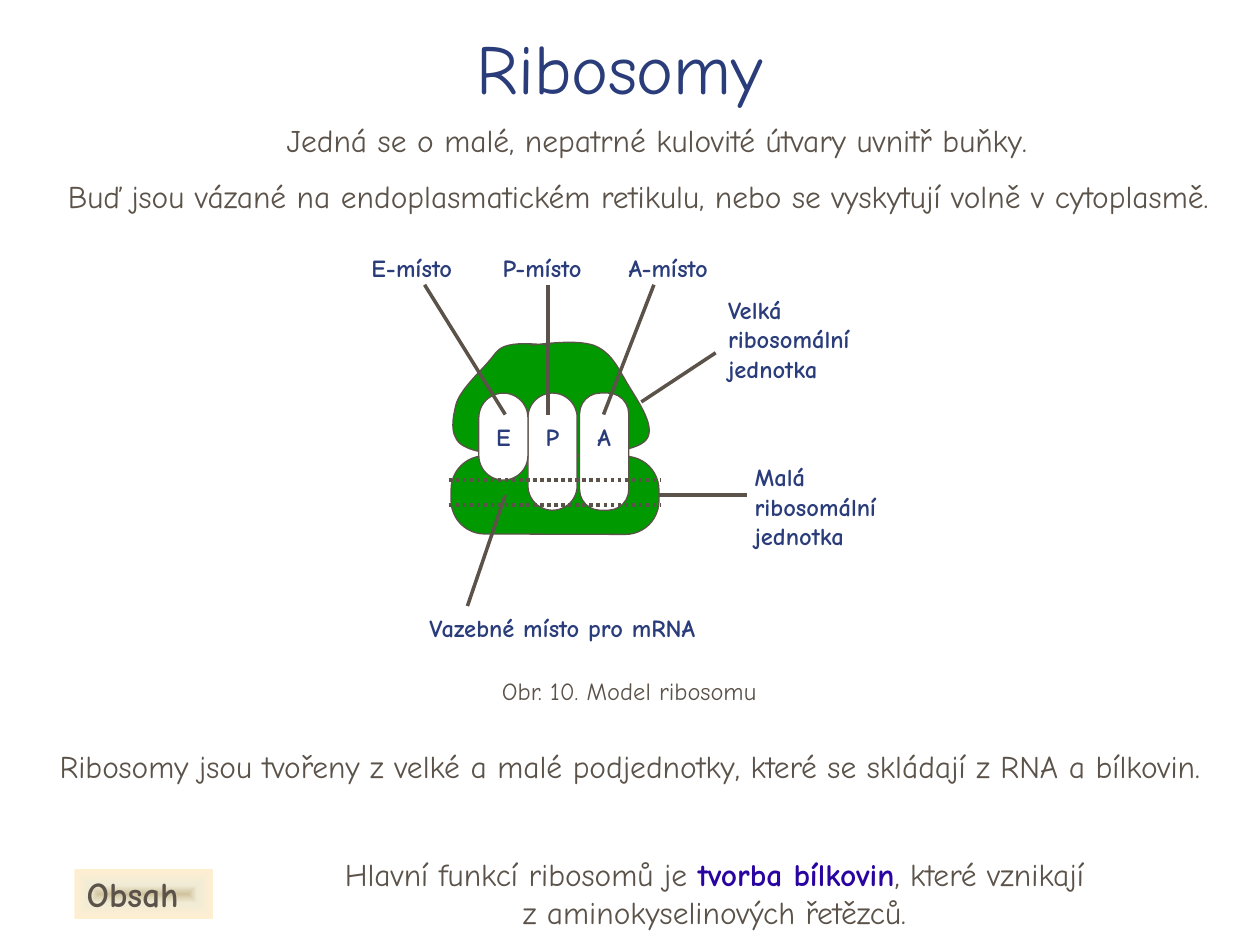
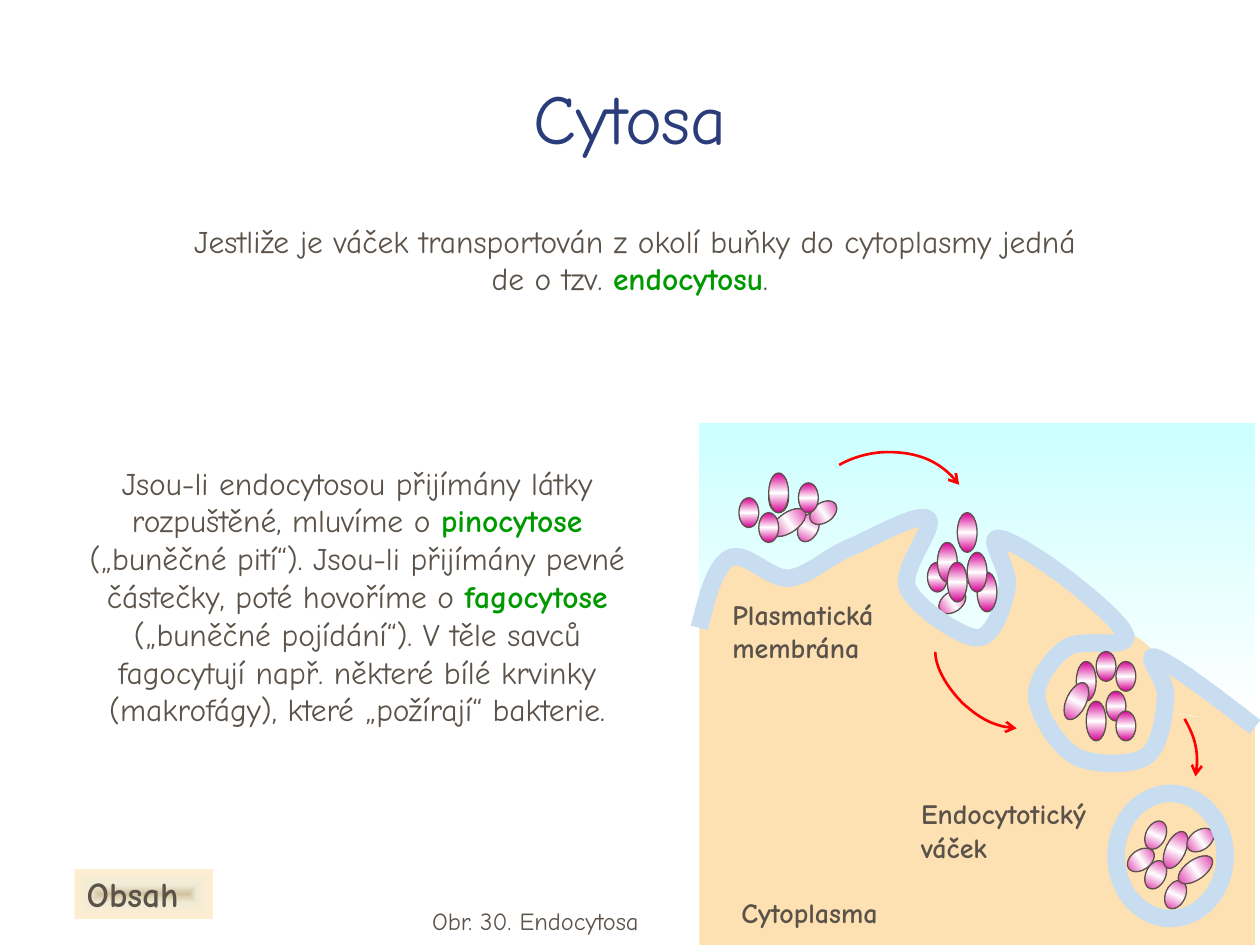
from copy import deepcopy
from dataclasses import dataclass
from math import cos, radians, sin

from lxml import etree
from pptx import Presentation
from pptx.dml.color import RGBColor
from pptx.enum.dml import MSO_LINE
from pptx.enum.shapes import MSO_CONNECTOR, MSO_SHAPE
from pptx.enum.text import MSO_ANCHOR, MSO_AUTO_SIZE, PP_ALIGN
from pptx.oxml.ns import qn
from pptx.slide import Slide
from pptx.util import Emu, Inches, Pt

FONT = "Comic Neue"
NBSP = chr(160)
NAVY = RGBColor(0x2A, 0x3D, 0x7A)
BROWN = RGBColor(0x5B, 0x52, 0x49)
VIOLET = RGBColor(0x29, 0x04, 0xA0)
GREEN = RGBColor(0x00, 0x99, 0x00)
WHITE = RGBColor(0xFF, 0xFF, 0xFF)
RED = RGBColor(0xFF, 0x00, 0x00)
SAND = RGBColor(0xFD, 0xE1, 0xB3)
MEMBRANE_BLUE = RGBColor(0xC9, 0xDD, 0xF1)
MAGENTA = RGBColor(0xD6, 0x00, 0x93)
SKY = RGBColor(0xCC, 0xFF, 0xFF)
BUTTON_STOPS = [(0, RGBColor(0xD1, 0xC3, 0x9F)), (35, RGBColor(0xF0, 0xEB, 0xD5)),
                (100, RGBColor(0xFF, 0xEF, 0xD1))]
PARTICLE_STOPS = [(0, MAGENTA), (50, WHITE), (100, MAGENTA)]

SLIDE_WIDTH, SLIDE_HEIGHT = Inches(10), Inches(7.5)
PAGE_COLUMNS = 100


@dataclass
class Grid:
    """Square cells on a page, counted from the left top corner of a box."""
    page: Slide
    left: int
    top: int
    cell: float

    def point(self, column, row):
        return Emu(round(self.left + column * self.cell)), Emu(round(self.top + row * self.cell))

    def box(self, column, row, width, height):
        return (*self.point(column, row), Emu(round(width * self.cell)), Emu(round(height * self.cell)))

    def inner(self, column, row, width, columns):
        """Divide a box that is width cells wide into the given number of columns."""
        return Grid(self.page, *self.point(column, row), width * self.cell / columns)


def write(frame, paragraphs, size, color, bold=False, align=PP_ALIGN.LEFT):
    """Each paragraph is a list of spans; a span (text, color) is emphasised."""
    for index, spans in enumerate(paragraphs):
        para = frame.paragraphs[0] if index == 0 else frame.add_paragraph()
        para.alignment = align
        for item in spans:
            text, emphasis = (item, None) if isinstance(item, str) else item
            span = para.add_run()
            span.text = text
            span.font.name = FONT
            span.font.size = Pt(size)
            span.font.bold = bold or emphasis is not None
            span.font.color.rgb = emphasis or color


def add_text(grid, cells, paragraphs, size=18, color=BROWN, bold=False, align=PP_ALIGN.CENTER,
             anchor=MSO_ANCHOR.TOP, wrap=True, grow=True):
    frame = grid.page.shapes.add_textbox(*grid.box(*cells)).text_frame
    frame.word_wrap = wrap
    frame.vertical_anchor = anchor
    frame.auto_size = MSO_AUTO_SIZE.SHAPE_TO_FIT_TEXT if grow else MSO_AUTO_SIZE.NONE
    write(frame, paragraphs, size, color, bold, align)


def add_label(grid, cells, lines, size, color, anchor=MSO_ANCHOR.TOP, wrap=False):
    add_text(grid, cells, [[line] for line in lines], size, color, True, PP_ALIGN.LEFT, anchor, wrap)


def set_gradient(shape, stops, centred=False):
    """Fill from top to bottom, or from the centre outwards."""
    shape.fill.background()
    gradient = etree.Element(qn("a:gradFill"), rotWithShape="1")
    stop_list = etree.SubElement(gradient, qn("a:gsLst"))
    for share, color in stops:
        stop = etree.SubElement(stop_list, qn("a:gs"), pos=str(share * 1000))
        etree.SubElement(stop, qn("a:srgbClr"), val=str(color))
    if centred:
        route = etree.SubElement(gradient, qn("a:path"))
        route.set("path", "rect")
        etree.SubElement(route, qn("a:fillToRect"), l="50000", t="50000", r="50000", b="50000")
    else:
        etree.SubElement(gradient, qn("a:lin"), ang="5400000", scaled="1")
    properties = shape._element.spPr
    properties.replace(properties.find(qn("a:noFill")), gradient)


def paint(shape, fill=None, line=None, width=0.75):
    shape.shadow.inherit = False
    if isinstance(fill, list):
        set_gradient(shape, fill)
    elif fill is None:
        shape.fill.background()
    else:
        shape.fill.solid()
        shape.fill.fore_color.rgb = fill
    if line is None:
        shape.line.fill.background()
    else:
        shape.line.color.rgb = line
        shape.line.width = Pt(width)
    return shape


def add_preset(grid, kind, cells, fill=None, line=None, width=0.75):
    return paint(grid.page.shapes.add_shape(kind, *grid.box(*cells)), fill, line, width)


def add_curve(grid, knots, corner=None, fill=None, line=None, width=0.75):
    """Outline of a start, then two handles and an end for each bend.

    A corner adds the unstroked sector between the curve and that point.
    """
    vertices = [grid.point(*knot) for knot in knots + ([corner] if corner else [])]
    builder = grid.page.shapes.build_freeform(*vertices[0])
    builder.add_line_segments(vertices[1:], close=False)
    shape = paint(builder.convert_to_shape(), fill, line, width)
    outline = next(shape._element.iter(qn("a:path")))
    segments = outline.findall(qn("a:lnTo"))
    last = segments.pop() if corner else None
    for index in range(0, len(segments), 3):
        bend = etree.Element(qn("a:cubicBezTo"))
        segments[index].addprevious(bend)
        for segment in segments[index:index + 3]:
            bend.append(segment[0])
            outline.remove(segment)
    if corner:
        sector = deepcopy(outline)
        sector.set("stroke", "0")
        etree.SubElement(sector, qn("a:close"))
        outline.addnext(sector)
        outline.set("fill", "none")
        outline.remove(last)
    return shape


def add_line(grid, start, end, dotted=False):
    line = grid.page.shapes.add_connector(MSO_CONNECTOR.STRAIGHT, *grid.point(*start), *grid.point(*end))
    line.line.color.rgb = BROWN
    line.line.width = Pt(2)
    if dotted:
        line.line.dash_style = MSO_LINE.ROUND_DOT
    etree.SubElement(line._element.spPr, qn("a:effectLst"))
    return line


def add_caption(grid, cells, text):
    add_text(grid, cells, [[text]], 14)


def add_contents_button(grid):
    button = add_preset(grid, MSO_SHAPE.ACTION_BUTTON_CUSTOM, (5.9, 69, 11, 3.9))
    set_gradient(button, BUTTON_STOPS, centred=True)
    frame = button.text_frame
    frame.word_wrap = False
    frame.vertical_anchor = MSO_ANCHOR.MIDDLE
    write(frame, [["Obsah"]], 20, BROWN, True)


def add_title_panel(grid, cells, text):
    """Title on a half transparent white panel."""
    panel = add_preset(grid, MSO_SHAPE.RECTANGLE, cells, WHITE)
    etree.SubElement(next(panel._element.spPr.iter(qn("a:srgbClr"))), qn("a:alpha"), val="49000")
    frame = panel.text_frame
    frame.word_wrap = True
    frame.vertical_anchor = MSO_ANCHOR.BOTTOM
    write(frame, [[text]], 40, NAVY, align=PP_ALIGN.CENTER)


def add_site(grid, letter, column, height, rounding):
    site = add_preset(grid, MSO_SHAPE.ROUNDED_RECTANGLE, (column, 11.6, 3.9, height), WHITE, BROWN)
    site.adjustments[0] = rounding
    frame = site.text_frame
    frame.word_wrap = False
    frame.vertical_anchor = MSO_ANCHOR.MIDDLE
    # Letters of the long sites stand level with the letter of the short one.
    frame.margin_bottom = Inches(0.05) + round((height - 6.9) * grid.cell)
    write(frame, [[letter]], 14, NAVY, True, PP_ALIGN.CENTER)


def draw_ribosome(grid):
    small = add_preset(grid, MSO_SHAPE.ROUNDED_RECTANGLE, (7.3, 16.6, 16.5, 6.2), GREEN, BROWN)
    small.adjustments[0] = 0.43
    small.rotation = 0.2
    add_curve(grid, [
        (15.2, 7.8), (14, 7.7), (12.7, 7.6), (11.9, 7.8), (11, 8), (10.9, 8.4), (10.2, 9.2),
        (9.5, 10), (8, 11.4), (7.7, 12.5), (7.4, 13.7), (7.1, 15.3), (8.5, 15.9),
        (9.9, 16.6), (13.7, 16.7), (16.1, 16.6), (18.5, 16.5), (22, 16.3), (22.8, 15.3),
        (23.7, 14.2), (21.8, 11.8), (21.1, 10.5), (20.4, 9.3), (19.9, 8.3), (18.6, 7.8),
        (17.3, 7.4), (15.5, 7.6), (13.6, 7.8),
    ], fill=GREEN, line=BROWN)
    for letter, column, height, rounding in (("P", 13.4, 9.3, 0.5), ("A", 17.5, 9.3, 0.42),
                                             ("E", 9.5, 6.9, 0.5)):
        add_site(grid, letter, column, height, rounding)
    for row in (18.5, 20.5):
        add_line(grid, (7.1, row), (23.9, row), dotted=True)
    for start, end in (((5.2, 3), (11.6, 13.3)), ((15, 3), (15, 13.3)), ((23.4, 3), (19.4, 13.3)),
                       ((22.4, 12.3), (28.3, 8.4)), ((11.6, 19.7), (8.6, 28.5))):
        add_line(grid, start, end)
    add_line(grid, (23.8, 19.7), (30.8, 19.7)).begin_connect(small, 3)
    for cells, lines in (((0, 0, 9.4, 3.3), ["E-místo"]),
                         ((10.4, 0, 9.2, 3.3), ["P-místo"]),
                         ((20.4, 0, 9.6, 3.3), ["A-místo"]),
                         ((28.3, 3.3, 14.3, 8), ["Velká", "ribosomální", "jednotka"]),
                         ((30.4, 16.6, 13.2, 8), ["Malá", "ribosomální", "jednotka"]),
                         ((4.6, 28.6, 26.1, 3.3), ["Vazebné místo pro mRNA"])):
        add_label(grid, cells, lines, 14, NAVY, MSO_ANCHOR.BOTTOM)
    add_caption(grid, (0.8, 33.6, 41.3, 3.3), "Obr. 10. Model ribosomu")


def add_particles(grid, height, turn, places):
    for column, row in places:
        particle = add_preset(grid, MSO_SHAPE.OVAL, (column, row, 2, height), PARTICLE_STOPS, BROWN)
        particle.rotation = turn


def add_arrow(grid, knots, corner, pivot=(0, 0), turn=0):
    """Curved arrow whose frame is turned about its middle, the pivot."""
    across, down = cos(radians(turn)), sin(radians(turn))

    def turn_back(knot):
        x, y = knot[0] - pivot[0], knot[1] - pivot[1]
        return pivot[0] + x * across + y * down, pivot[1] - x * down + y * across

    arrow = add_curve(grid, [turn_back(knot) for knot in knots], turn_back(corner), line=RED, width=1.5)
    arrow.rotation = turn
    etree.SubElement(arrow._element.spPr.find(qn("a:ln")), qn("a:tailEnd"), type="arrow")


def draw_endocytosis(grid):
    add_preset(grid, MSO_SHAPE.RECTANGLE, (0, 0, 56, 30), [(0, SKY), (100, WHITE)])
    add_preset(grid, MSO_SHAPE.RECTANGLE, (0, 29.6, 56, 23), SAND)
    add_particles(grid, 3, 25, [(45, 40), (10, 9), (45, 44), (47, 46)])
    add_particles(grid, 4, 25, [(47, 41)])
    add_particles(grid, 3, 55, [(49.5, 40.5), (43.5, 42.5), (11.5, 7.5), (24.5, 16.5)])
    add_particles(grid, 4, 55, [(49, 43), (8, 8)])
    add_particles(grid, 3, 0, [(4, 7.5), (7, 6), (6, 9), (10, 6)])
    add_particles(grid, 4, 0, [(26, 9), (7, 5)])
    add_preset(grid, MSO_SHAPE.OVAL, (34, 20.6, 14, 18), SAND)
    add_preset(grid, MSO_SHAPE.RIGHT_TRIANGLE, (0, 19.6, 50, 10), SAND)
    add_curve(grid, [
        (0, 20.6), (0.8, 17.5), (1.5, 14.5), (3, 13.6), (4.6, 12.7), (7, 15.7), (9, 15.6),
        (11, 15.4), (12.7, 13.6), (15, 12.6), (17.4, 11.6), (22, 8.9), (23, 9.6),
        (24, 10.3), (20.2, 14.6), (21, 16.6), (21.8, 18.5), (26.4, 21.6), (28, 21.6),
        (29.7, 21.6), (30.7, 18.3), (31, 16.6), (31.4, 14.9), (29.1, 11.7), (30, 11.6),
        (31, 11.4), (34.9, 14), (37, 15.6), (39.2, 17.3), (43, 20.4), (43, 21.6),
        (43, 22.7), (38.5, 21.6), (37, 22.6), (35.6, 23.6), (33.9, 25.8), (34, 27.6),
        (34.2, 29.5), (36.2, 32.6), (38, 33.6), (39.9, 34.5), (43.6, 34.5), (45, 33.6),
        (46.5, 32.6), (46.9, 29.2), (47, 27.6), (47.2, 25.9), (44.6, 23.1), (46, 23.6),
        (47.5, 24.1), (51.8, 27.3), (56, 30.6),
    ], fill=SAND, line=MEMBRANE_BLUE, width=10)
    add_preset(grid, MSO_SHAPE.OVAL, (42, 37.3, 11, 12.6), line=MEMBRANE_BLUE, width=10)
    add_particles(grid, 3, 0, [(42, 24), (41, 27), (42, 29), (23, 14)])
    add_particles(grid, 4, 0, [(24, 12), (28, 15), (38, 24), (25, 14), (27, 13), (39, 28)])
    add_particles(grid, 4, 25, [(37, 26)])
    add_particles(grid, 3, 0, [(40, 23)])
    add_label(grid, (21.1, 37, 22.6, 8.1), ["Endocytotický", "váček"], 16, BROWN)
    add_label(grid, (2.1, 16.9, 19, 8.1), ["Plasmatická membrána"], 16, BROWN, wrap=True)
    add_arrow(grid, [(14.1, 4.2), (15.5, 3.4), (17.3, 2.9), (19, 2.9),
                     (22.1, 2.9), (24.8, 4.2), (26.2, 6.2)], (19, 8.9))
    add_arrow(grid, [(23.7, 23), (23.7, 24.5), (24.8, 26.5), (26.5, 28.2),
                     (28.3, 29.8), (30.3, 30.7), (31.9, 30.7)], (28.8, 25.8), (27.75, 26.92), 42.6)
    add_arrow(grid, [(48.9, 29.8), (50, 31.7), (50.4, 33.8), (50, 35.6)],
              (43.2, 32.3), (47.75, 32.83), 46.3)
    add_label(grid, (3, 47, 17.7, 4.7), ["Cytoplasma"], 16, BROWN)


def build_ribosomes(grid):
    add_title_panel(grid, (6.7, 0.5, 85, 8.6), "Ribosomy")
    add_text(grid, (5.1, 9.1, 94.9, 4), [["Jedná se o malé, nepatrné kulovité útvary uvnitř buňky. "]])
    add_text(grid, (0.4, 13.6, 100.5, 4), [[
        f"Buď jsou vázané na{NBSP}endoplasmatickém retikulu, nebo se vyskytují volně v cytoplasmě."]],
        wrap=False)
    add_text(grid, (18.5, 67.4, 76.4, 7), [[
        "Hlavní funkcí ribosomů je ", ("tvorba bílkovin", VIOLET),
        f", které vznikají z{NBSP}aminokyselinových řetězců."]])
    draw_ribosome(grid.inner(28.5, 19.6, 44, 44))
    add_text(grid, (0, 58.8, 100, 7), [[
        f"Ribosomy jsou tvořeny z{NBSP}velké a malé podjednotky, "
        f"které se skládají z{NBSP}RNA a bílkovin."]])
    add_contents_button(grid)


def build_cytosis(grid):
    add_text(grid, (13, 17.1, 74.8, 7), [[
        "Jestliže je váček transportován z okolí buňky do cytoplasmy jedná de o tzv. ",
        ("endocytosu", GREEN), ". "]], anchor=MSO_ANCHOR.MIDDLE)
    add_text(grid, (0, 3, 100, 10.1), [["Cytosa"]], 40, NAVY, anchor=MSO_ANCHOR.BOTTOM, grow=False)
    add_text(grid, (5.1, 34.8, 46.5, 25), [[
        "Jsou-li endocytosou přijímány látky rozpuštěné, mluvíme o ", ("pinocytose", GREEN),
        " („buněčné pití“). Jsou-li přijímány pevné částečky, poté hovoříme o ",
        ("fagocytose", GREEN), f" („buněčné pojídání“). V{NBSP}těle savců fagocytují např. "
        "některé bílé krvinky (makrofágy), které „požírají“ bakterie."]], anchor=MSO_ANCHOR.MIDDLE)
    draw_endocytosis(grid.inner(55.5, 33.6, 44.1, 56))
    add_caption(grid, (29.5, 71.4, 26, 3.3), "Obr. 30. Endocytosa")
    add_contents_button(grid)


def main():
    deck = Presentation()
    deck.slide_width, deck.slide_height = SLIDE_WIDTH, SLIDE_HEIGHT
    for build in (build_ribosomes, build_cytosis):
        page = deck.slides.add_slide(deck.slide_layouts[6])
        build(Grid(page, 0, 0, SLIDE_WIDTH / PAGE_COLUMNS))
    deck.save("out.pptx")


if __name__ == "__main__":
    main()
